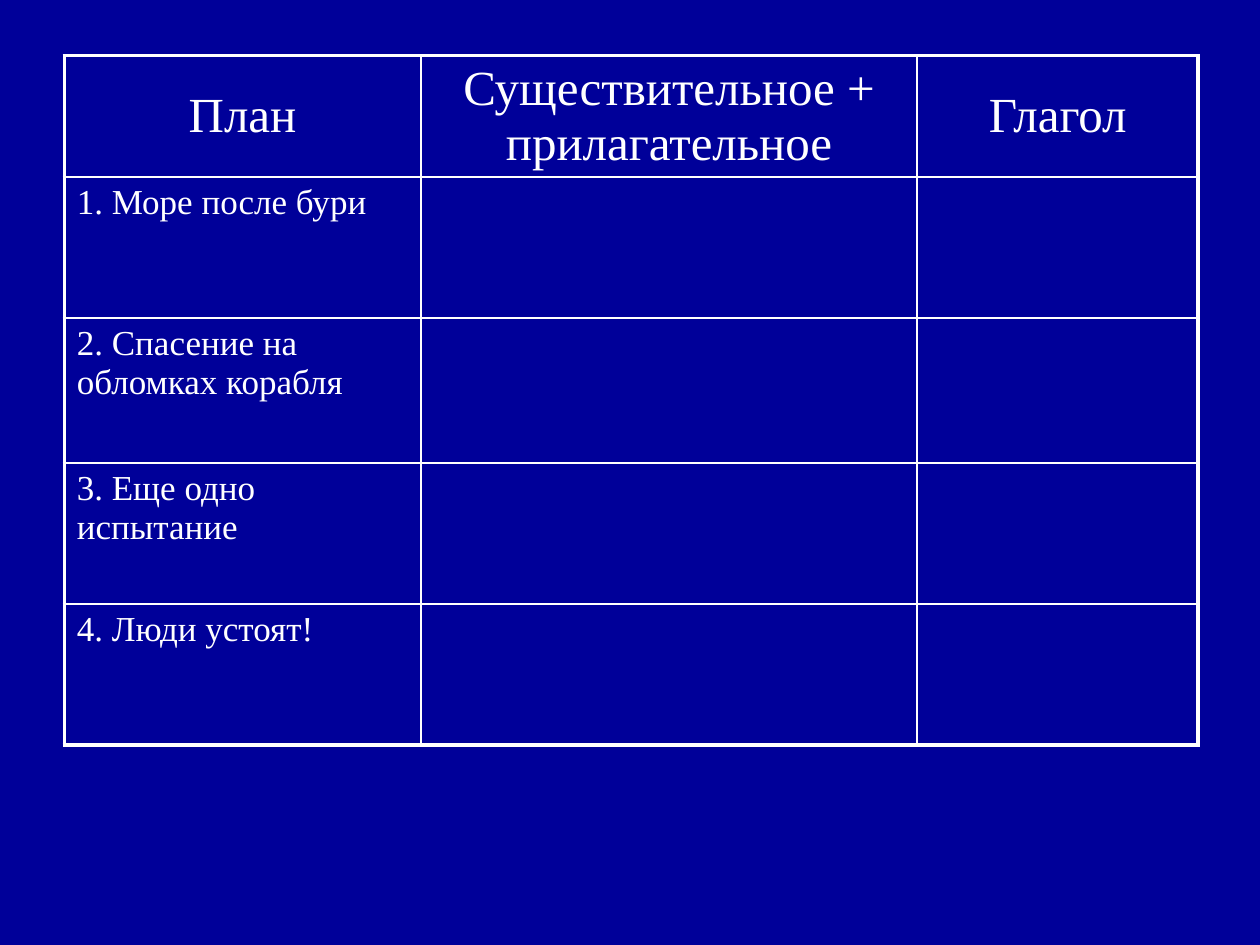
from lxml import etree
from pptx import Presentation, util as u
from pptx.dml.color import RGBColor
from pptx.enum import text
from pptx.oxml import ns

HUES = {"back": "000099", "ink": "FFFFFF"}
FONT = "Times New Roman"
THIN, THICK = 1, 2.25


class Deck:
    def __init__(self, wide, high):
        self.prs = Presentation()
        self.prs.slide_width, self.prs.slide_height = u.Inches(wide), u.Inches(high)
        self.slide = self.prs.slides.add_slide(self.prs.slide_layouts[6])
        fill = self.slide.background.fill
        fill.solid()
        fill.fore_color.rgb = RGBColor.from_string(HUES["back"])

    def table(self, rows, left, top, cols, highs):
        """Place a table; left and top are shares of the slide."""
        frame = self.slide.shapes.add_table(
            len(rows), len(cols),
            int(left * self.prs.slide_width), int(top * self.prs.slide_height),
            u.Inches(sum(cols)), u.Inches(sum(highs)))
        grid = frame.table
        grid.first_row = grid.horz_banding = False
        for col, wide in zip(grid.columns, cols):
            col.width = u.Inches(wide)
        for row, high in zip(grid.rows, highs):
            row.height = u.Inches(high)
        for r, row in enumerate(rows):
            for c, words in enumerate(row):
                cell = grid.cell(r, c)
                # Thick lines run only along the outer edge
                self.edge(cell, {"L": c == 0, "R": c == len(cols) - 1,
                                 "T": r == 0, "B": r == len(rows) - 1})
                cell.fill.background()
                self.label(cell, words, head=r == 0)

    def edge(self, cell, sides):
        props = cell._tc.get_or_add_tcPr()
        for side, outer in sides.items():
            line = etree.SubElement(props, ns.qn(f"a:ln{side}"),
                                    w=str(u.Pt(THICK if outer else THIN)))
            fill = etree.SubElement(line, ns.qn("a:solidFill"))
            etree.SubElement(fill, ns.qn("a:srgbClr"), val=HUES["ink"])

    def label(self, cell, words, head):
        cell.text = words
        cell.vertical_anchor = (text.MSO_ANCHOR.MIDDLE if head
                                else text.MSO_ANCHOR.TOP)
        para = cell.text_frame.paragraphs[0]
        para.alignment = text.PP_ALIGN.CENTER if head else text.PP_ALIGN.LEFT
        para.font.name = FONT
        para.font.size = u.Pt(28 if head else 20)
        para.font.color.rgb = RGBColor.from_string(HUES["ink"])


def main():
    deck = Deck(10, 7.5)

    # Plan in the first column, the other two left for pupils to fill
    heads = ["План", "Существительное + прилагательное", "Глагол"]
    plan = ["1. Море после бури", "2. Спасение на обломках корабля",
            "3. Еще одно испытание", "4. Люди устоят!"]
    rows = [heads] + [[step, "", ""] for step in plan]
    deck.table(rows, left=0.051, top=0.059, cols=[2.83, 3.94, 2.23],
               highs=[0.96, 1.12, 1.15, 1.12, 1.12])

    deck.prs.save("out.pptx")


if __name__ == "__main__":
    main()
